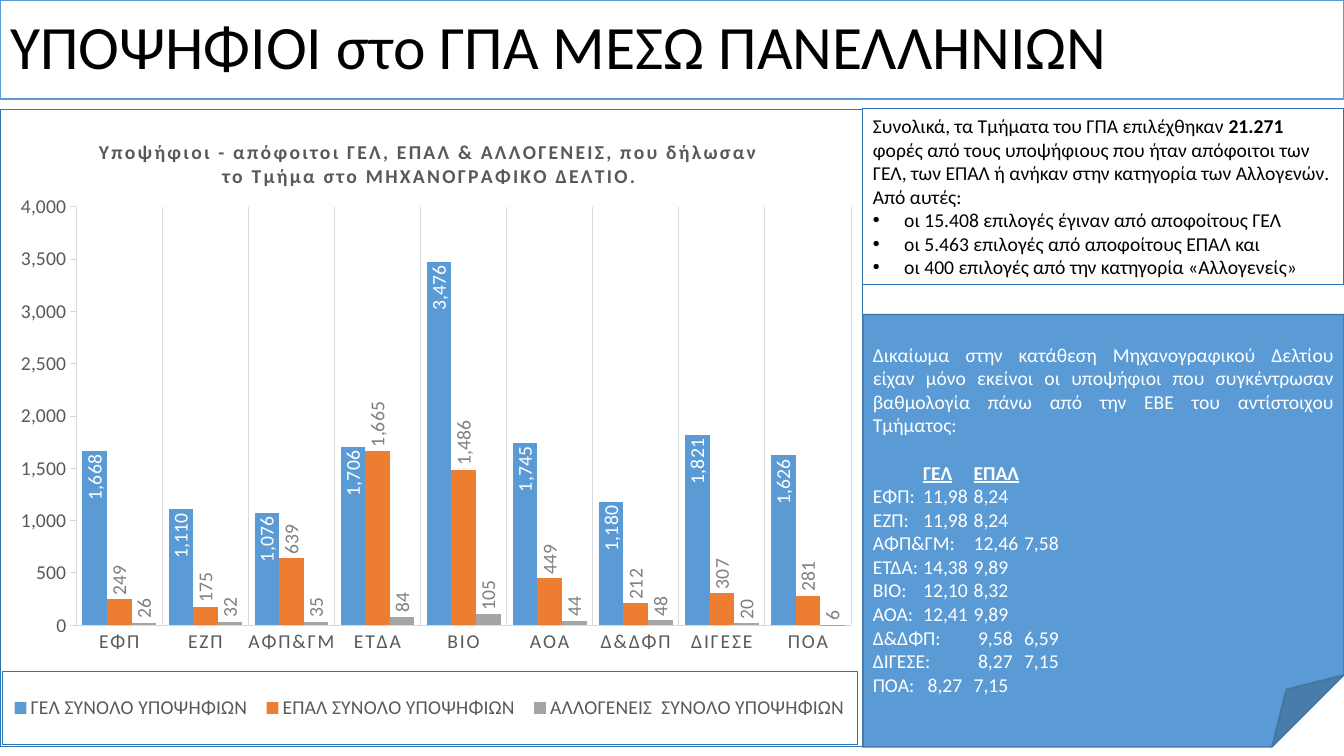
"""Slide on the candidates who chose the departments of the university."""
from lxml.etree import SubElement
from pptx import Presentation
from pptx.chart.data import CategoryChartData
from pptx.dml.color import RGBColor
from pptx.enum.chart import XL_CHART_TYPE as Chart, XL_LABEL_POSITION as Spot
from pptx.enum.chart import XL_LEGEND_POSITION as Side, XL_TICK_MARK as Tick
from pptx.enum.shapes import MSO_SHAPE as Shape
from pptx.enum.text import MSO_ANCHOR as Anchor, MSO_AUTO_SIZE as Fit, PP_ALIGN as Align
from pptx.oxml import parse_xml
from pptx.oxml.ns import nsdecls, qn
from pptx.util import Inches, Pt

COLORS = {
    "blue": "5B9BD5", "orange": "ED7D31", "gray": "A5A5A5", "border": "2E75B6",
    "fold": "43739E", "text": "595959", "label": "808080", "grid": "D9D9D9",
    "black": "000000", "white": "FFFFFF",
}
RGB = {name: RGBColor.from_string(code) for name, code in COLORS.items()}
WIDTH, HEIGHT = Inches(13.33), Inches(7.5)
SPLIT = int(WIDTH * 0.642)
TOP = int(HEIGHT * 0.144)
BOTTOM = int(HEIGHT * 0.988)


def style(font, color="text", **values):
    for key, value in {"name": "Calibri", "size": Pt(14), **values}.items():
        setattr(font, key, value)
    font.color.rgb = RGB[color]


def place(parent, index, **shares):
    for old in parent.findall(qn("c:layout")):
        parent.remove(old)
    layout = parse_xml(f"<c:layout {nsdecls('c')}><c:manualLayout/></c:layout>")
    for tag, value in shares.items():
        SubElement(layout[0], qn(f"c:{tag}")).set("val", str(value))
    parent.insert(index, layout)


deck = Presentation()
deck.slide_width, deck.slide_height = WIDTH, HEIGHT
slide = deck.slides.add_slide(deck.slide_layouts[1])
heading, summary = slide.placeholders

boxes = [
    (heading, (0, 0, WIDTH, int(HEIGHT * 0.131)), "blue", Anchor.MIDDLE),
    (summary, (SPLIT, TOP, WIDTH - SPLIT, int(HEIGHT * 0.233)), "border", Anchor.TOP),
]
for box, bounds, edge, anchor in boxes:
    box.left, box.top, box.width, box.height = bounds
    box.line.color.rgb, box.line.width = RGB[edge], Pt(0.75)
    box.text_frame.auto_size = Fit.NONE
    box.text_frame.vertical_anchor = anchor

heading.text_frame.text = "ΥΠΟΨΗΦΙΟΙ στο ΓΠΑ ΜΕΣΩ ΠΑΝΕΛΛΗΝΙΩΝ"
title_line = heading.text_frame.paragraphs[0]
title_line.alignment, title_line.line_spacing = Align.LEFT, 0.9
style(title_line.runs[0].font, "black", size=Pt(44))

applicants = CategoryChartData(number_format="#,##0")
applicants.categories = ["ΕΦΠ", "ΕΖΠ", "ΑΦΠ&ΓΜ", "ΕΤΔΑ", "ΒΙΟ", "ΑΟΑ", "Δ&ΔΦΠ", "ΔΙΓΕΣΕ", "ΠΟΑ"]
groups = [
    ("ΓΕΛ ΣΥΝΟΛΟ ΥΠΟΨΗΦΙΩΝ", "blue", "white", Spot.INSIDE_END,
     (1668, 1110, 1076, 1706, 3476, 1745, 1180, 1821, 1626)),
    ("ΕΠΑΛ ΣΥΝΟΛΟ ΥΠΟΨΗΦΙΩΝ", "orange", "label", Spot.OUTSIDE_END,
     (249, 175, 639, 1665, 1486, 449, 212, 307, 281)),
    ("ΑΛΛΟΓΕΝΕΙΣ  ΣΥΝΟΛΟ ΥΠΟΨΗΦΙΩΝ", "gray", "label", Spot.OUTSIDE_END,
     (26, 32, 35, 84, 105, 44, 48, 20, 6)),
]
for name, *_, counts in groups:
    applicants.add_series(name, counts)
chart = slide.shapes.add_chart(
    Chart.COLUMN_CLUSTERED, 0, TOP, SPLIT, BOTTOM - TOP, applicants).chart
style(chart.font, "black")
chart.has_legend = True
chart.legend.position, chart.legend.include_in_layout = Side.BOTTOM, False
style(chart.legend.font)

chart.chart_title.text_frame.text = (
    "Υποψήφιοι - απόφοιτοι ΓΕΛ, ΕΠΑΛ & ΑΛΛΟΓΕΝΕΙΣ, που δήλωσαν το "
    "Τμήμα στο ΜΗΧΑΝΟΓΡΑΦΙΚΟ ΔΕΛΤΙΟ.")
chart_heading = chart.chart_title.text_frame.paragraphs[0].runs[0]
style(chart_heading.font, bold=True)
chart_heading.font._element.set("spc", "150")

departments, amounts = chart.category_axis, chart.value_axis
for axis, mark in ((departments, Tick.NONE), (amounts, Tick.OUTSIDE)):
    axis.major_tick_mark, axis.minor_tick_mark = mark, Tick.NONE
    axis.has_major_gridlines = axis is departments
    style(axis.tick_labels.font)
    axis.format.line.color.rgb, axis.format.line.width = RGB["grid"], Pt(0.75)
grid = departments.major_gridlines.format.line
grid.color.rgb, grid.width = RGB["grid"], Pt(0.75)
departments._element.xpath(".//a:defRPr")[0].set("spc", "120")
amounts.minimum_scale, amounts.maximum_scale, amounts.major_unit = 0, 4000, 500
amounts.tick_labels.number_format = "#,##0"
amounts.tick_labels.number_format_is_linked = False

plot = chart.plots[0]
plot.gap_width, plot.overlap, plot.vary_by_categories = 50, 0, False
for series, (_, fill, ink, spot, _) in zip(plot.series, groups):
    series.format.fill.solid()
    series.format.fill.fore_color.rgb = RGB[fill]
    labels = series.data_labels
    style(labels.font, ink)
    labels.show_value, labels.position = True, spot
    labels.number_format, labels.number_format_is_linked = "#,##0", False
    turn = labels._element.xpath(".//a:bodyPr")[0]
    turn.set("rot", "-5400000")
    turn.set("vert", "horz")

place(chart.chart_title._element, 1, xMode="edge", yMode="edge", x=0.11, y=0.04)
place(chart.legend._element, 1, xMode="edge", yMode="edge", x=0.002, y=0.883, w=0.992, h=0.114)
place(plot._element.getparent(), 0, layoutTarget="inner", xMode="edge", yMode="edge",
      x=0.088, y=0.153, w=0.899, h=0.657)
for framed in (chart._chartSpace, chart.legend._element):
    framed.find(qn("c:txPr")).addprevious(parse_xml(
        f'<c:spPr {nsdecls("c", "a")}><a:noFill/><a:ln w="9525"><a:solidFill>'
        f'<a:srgbClr val="{COLORS["border"]}"/></a:solidFill></a:ln></c:spPr>'))

findings = [
    (False, ["Συνολικά, τα Τμήματα του ΓΠΑ επιλέχθηκαν ", "21.271",
             " φορές από τους υποψήφιους που ήταν απόφοιτοι των ΓΕΛ, των ΕΠΑΛ "
             "ή ανήκαν στην κατηγορία των Αλλογενών."]),
    (False, ["Από αυτές:"]),
    (True, ["οι 15.408 επιλογές έγιναν από αποφοίτους ΓΕΛ"]),
    (True, ["οι 5.463 επιλογές από αποφοίτους ΕΠΑΛ και"]),
    (True, ["οι 400 επιλογές από την κατηγορία «Αλλογενείς»"]),
]
for row, (bulleted, pieces) in enumerate(findings):
    finding = summary.text_frame.paragraphs[0] if row == 0 else summary.text_frame.add_paragraph()
    finding.space_before = Pt(0)
    indent = Inches(0.31) if bulleted else 0
    props = finding._p.get_or_add_pPr()
    props.set("marL", str(indent))
    props.set("indent", str(-indent))
    if bulleted:
        SubElement(props, qn("a:buChar")).set("char", "•")
    else:
        SubElement(props, qn("a:buNone"))
    for position, piece in enumerate(pieces):
        run = finding.add_run()
        run.text = piece
        style(run.font, "black", bold=position == 1)

panel_top = int(HEIGHT * 0.416)
panel = slide.shapes.add_shape(
    Shape.FOLDED_CORNER, SPLIT, panel_top, WIDTH - SPLIT, BOTTOM - panel_top)
panel.shadow.inherit = False
panel.fill.solid()
panel.fill.fore_color.rgb = RGB["blue"]
panel.line.color.rgb, panel.line.width = RGB["fold"], Pt(1)
thresholds = panel.text_frame
thresholds.word_wrap, thresholds.vertical_anchor = True, Anchor.TOP
thresholds.margin_top = Inches(0.28)
threshold_lines = [
    "Δικαίωμα στην κατάθεση Μηχανογραφικού Δελτίου είχαν μόνο εκείνοι οι υποψήφιοι που "
    "συγκέντρωσαν βαθμολογία πάνω από την ΕΒΕ του αντίστοιχου Τμήματος:",
    "\tΓΕΛ\tΕΠΑΛ",
    "ΕΦΠ:\t11,98\t8,24",
    "ΕΖΠ:\t11,98\t8,24",
    "ΑΦΠ&ΓΜ:\t12,46\t7,58",
    "ΕΤΔΑ:\t14,38\t9,89",
    "ΒΙΟ:\t12,10\t8,32",
    "ΑΟΑ:\t12,41\t9,89",
    "Δ&ΔΦΠ:\t 9,58\t6,59",
    "ΔΙΓΕΣΕ:\t 8,27\t7,15",
    "ΠΟΑ:\t 8,27\t7,15",
]
for row, line in enumerate(threshold_lines):
    entry = thresholds.paragraphs[0] if row == 0 else thresholds.add_paragraph()
    entry.alignment = Align.JUSTIFY if row == 0 else Align.LEFT
    entry.space_before = Pt(17 if row == 1 else 0)
    for piece in (["\t", line[1:]] if row == 1 else [line]):
        run = entry.add_run()
        run.text = piece
        is_header = row == 1 and piece != "\t"
        style(run.font, "white", bold=is_header, underline=is_header)

deck.save("out.pptx")
